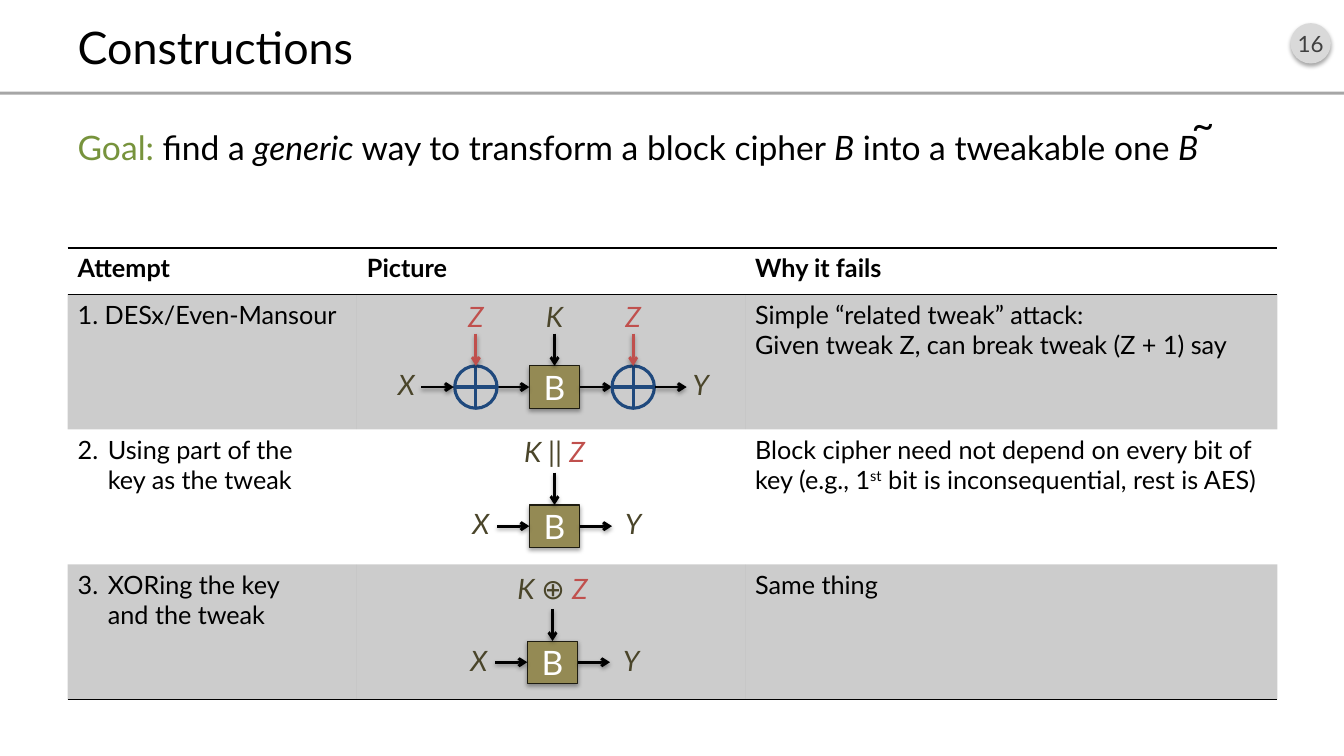
from lxml.etree import SubElement
from pptx import Presentation
from pptx.dml.color import RGBColor
from pptx.enum.shapes import MSO_CONNECTOR, MSO_SHAPE
from pptx.enum.text import MSO_ANCHOR, MSO_AUTO_SIZE, PP_ALIGN
from pptx.oxml.ns import qn
from pptx.util import Inches, Pt

COLORS = {
    "black": "000000", "white": "FFFFFF", "goal": "77933C", "badge": "D9D9D9",
    "badge_text": "404040", "rule": "A6A6A6", "cipher": "948A54",
    "cipher_edge": "1E1C11", "label": "4A452A", "tweak": "C0504D", "xor": "1F497D",
}
NO_GRID_STYLE = "{2D5ABB26-0587-4C30-8999-92F81FD0307C}"
TOP, LEFT, RIGHT = 0, 1, 3


def rgb(name):
    return RGBColor.from_string(COLORS[name])


def write(paragraph, text, size=18, color="black", bold=False, italic=False, baseline=None):
    run = paragraph.add_run()
    run.text = text
    font = run.font
    font.name, font.size, font.bold, font.italic = "Lato", Pt(size), bold, italic
    font.color.rgb = rgb(color)
    if baseline:
        font._element.set("baseline", str(baseline * 1000))


def add_color(parent, name, alpha=None):
    color = SubElement(parent, qn("a:srgbClr"), val=COLORS[name])
    if alpha:
        SubElement(color, qn("a:alpha"), val=str(alpha * 1000))


def add_effects(shape, shadow):
    """Replace the theme shadow with a soft drop shadow, or with none."""
    effects = SubElement(shape._element.spPr, qn("a:effectLst"))
    if shadow:
        outer = SubElement(effects, qn("a:outerShdw"), blurRad=str(Pt(3.1)),
                           dist=str(Pt(1.7)), dir="5400000", rotWithShape="0")
        add_color(outer, "black", 35)


class SlideBuilder:
    """Style and element methods for the current slide."""

    def __init__(self, presentation):
        self.slide = presentation.slides.add_slide(presentation.slide_layouts[1])
        self.shapes = self.slide.shapes

    def start_group(self):
        self.shapes = self.slide.shapes.add_group_shape().shapes

    def placeholder(self, index, left, top, width, height, anchor):
        shape = self.slide.placeholders[index]
        shape.left, shape.top = Inches(left), Inches(top)
        shape.width, shape.height = Inches(width), Inches(height)
        frame = shape.text_frame
        frame.auto_size, frame.vertical_anchor = MSO_AUTO_SIZE.NONE, anchor
        paragraph = frame.paragraphs[0]
        paragraph.alignment = PP_ALIGN.LEFT
        return paragraph

    def shape(self, kind, left, top, width, height, fill=None, line=None,
              line_width=0.75, shadow=False):
        shape = self.shapes.add_shape(kind, Inches(left), Inches(top),
                                      Inches(width), Inches(height))
        if fill:
            shape.fill.solid()
            shape.fill.fore_color.rgb = rgb(fill)
        else:
            shape.fill.background()
        if line:
            shape.line.color.rgb = rgb(line)
            shape.line.width = Pt(line_width)
        else:
            shape.line.fill.background()
        add_effects(shape, shadow)
        return shape

    def caption(self, shape, text, **format):
        frame = shape.text_frame
        frame.margin_left = frame.margin_right = 0
        frame.vertical_anchor = MSO_ANCHOR.MIDDLE
        frame.paragraphs[0].alignment = PP_ALIGN.CENTER
        write(frame.paragraphs[0], text, **format)

    def text_box(self, left, top, width, height, wrap=True):
        frame = self.shapes.add_textbox(Inches(left), Inches(top),
                                        Inches(width), Inches(height)).text_frame
        frame.word_wrap = wrap
        frame.auto_size = MSO_AUTO_SIZE.SHAPE_TO_FIT_TEXT
        return frame

    def label(self, center, top, *parts, width=0.42):
        """Centred italic label; each part is (text, color, italic)."""
        frame = self.text_box(center - width / 2, top, width, 0.34)
        frame.margin_left = frame.margin_right = frame.margin_top = frame.margin_bottom = 0
        frame.paragraphs[0].alignment = PP_ALIGN.CENTER
        for text, color, italic in parts:
            write(frame.paragraphs[0], text, size=20, color=color, italic=italic)

    def line(self, x1, y1, x2, y2, color="black", width=2.0, arrow=True):
        line = self.shapes.add_connector(MSO_CONNECTOR.STRAIGHT, Inches(x1), Inches(y1),
                                         Inches(x2), Inches(y2))
        line.line.color.rgb = rgb(color)
        line.line.width = Pt(width)
        if arrow:
            SubElement(line.line._get_or_add_ln(), qn("a:tailEnd"), type="arrow")
        add_effects(line, arrow)
        return line

    def xor(self, center, top):
        """Circled plus with the tweak entering from above."""
        size, half = 0.42, 0.21
        left = center - half
        self.shape(MSO_SHAPE.OVAL, left, top, size, size, line="xor", line_width=2.25)
        self.line(left, top + half, left + size, top + half, "xor", 2.25, arrow=False)
        self.line(center, top, center, top + size, "xor", 2.25, arrow=False)
        self.label(center, top - 0.66, ("Z", "tweak", True))
        self.line(center, top - 0.32, center, top, "tweak")

    def cipher(self, center, top, key, key_width, key_rise, masked=False):
        """Block cipher B with key, input X and output Y, optionally XOR-masked."""
        self.start_group()
        middle, arrow, edge = top + 0.21, 0.32, 0.25
        box = self.shape(MSO_SHAPE.RECTANGLE, center - edge, top, 2 * edge, 0.42,
                         fill="cipher", line="cipher_edge", shadow=True)
        self.caption(box, "B", size=24, color="white")
        self.label(center, top - key_rise, *key, width=key_width)
        self.line(center, top - arrow, center, top).end_connect(box, TOP)
        start, end = center - edge - arrow, center + edge + arrow
        self.line(start, middle, center - edge, middle).end_connect(box, LEFT)
        self.line(center + edge, middle, end, middle).begin_connect(box, RIGHT)
        input_x, output_x = center - 0.73, center + 0.78
        if masked:
            for side in (-1, 1):
                self.xor(center + side * 0.78, top)
            self.line(center - 1.32, middle, center - 1, middle)
            self.line(center + 1, middle, center + 1.31, middle)
            input_x, output_x = center - 1.47, center + 1.45
        self.label(input_x, top + 0.02, ("X", "label", True))
        self.label(output_x, top + 0.02, ("Y", "label", True))

    def border(self, cell, side):
        line = SubElement(cell._tc.get_or_add_tcPr(), qn("a:" + side), w=str(Pt(1)))
        add_color(SubElement(line, qn("a:solidFill")), "black")

    def table(self, rows, left, top, widths, heights):
        frame = self.slide.shapes.add_table(
            len(rows), len(widths), Inches(left), Inches(top),
            Inches(sum(widths)), Inches(sum(heights)))
        next(frame._element.iter(qn("a:tableStyleId"))).text = NO_GRID_STYLE
        table = frame.table
        for column, width in zip(table.columns, widths):
            column.width = Inches(width)
        for index, (row, height) in enumerate(zip(rows, heights)):
            table.rows[index].height = Inches(height)
            for cell, lines in zip(table.rows[index].cells, row):
                self.fill_cell(cell, lines, header=index == 0)
                if index == 0:
                    self.border(cell, "lnT")
                if index in (0, len(rows) - 1):
                    self.border(cell, "lnB")
                if index % 2:
                    self.shade(cell)
                elif index:
                    cell.fill.background()
                if index == len(rows) - 1:
                    self.shade(cell)

    def shade(self, cell):
        properties = cell._tc.get_or_add_tcPr()
        if properties.find(qn("a:solidFill")) is None:
            add_color(SubElement(properties, qn("a:solidFill")), "black", 20)

    def fill_cell(self, cell, lines, header):
        for number, line in enumerate(lines):
            frame = cell.text_frame
            paragraph = frame.add_paragraph() if number else frame.paragraphs[0]
            for text, baseline in line:
                first, *rest = text.split("\n")
                write(paragraph, first, bold=header, baseline=baseline)
                for part in rest:
                    paragraph.add_line_break()
                    write(paragraph, part, bold=header)
                if "\t" in text:  # hanging number
                    properties = paragraph._p.get_or_add_pPr()
                    properties.set("marL", str(Inches(0.3)))
                    properties.set("indent", str(-Inches(0.3)))


def main():
    presentation = Presentation()
    presentation.slide_width, presentation.slide_height = Inches(13.33), Inches(7.5)
    builder = SlideBuilder(presentation)

    # Header
    badge = builder.shape(MSO_SHAPE.OVAL, 12.8, 0.23, 0.4, 0.4, fill="badge", shadow=True)
    builder.caption(badge, "16", size=16, color="badge_text")
    builder.shape(MSO_SHAPE.RECTANGLE, 0, 0.91, 13.33, 0.03, fill="rule")
    write(builder.placeholder(0, 0.67, 0.16, 12, 0.6, MSO_ANCHOR.MIDDLE),
          "Constructions", size=32)

    # Goal
    goal = builder.placeholder(1, 0.67, 1.21, 12, 5.75, MSO_ANCHOR.TOP)
    goal.space_before = Pt(8)
    properties = goal._p.get_or_add_pPr()
    properties.set("marL", "0")
    properties.set("indent", "0")
    SubElement(properties, qn("a:buNone"))
    write(goal, "Goal:", size=24, color="goal")
    for text, italic in ((" find a ", False), ("generic", True),
                         (" way to transform a block cipher ", False), ("B", True),
                         (" into a tweakable one ", False), ("B", True)):
        write(goal, text, size=24, italic=italic)
    tilde = builder.text_box(11.72, 0.95, 0.43, 0.57, wrap=False)
    write(tilde.paragraphs[0], "~", size=28)

    # Table: cells hold paragraphs, paragraphs hold (text, baseline) runs
    def plain(*lines):
        return [[(line, None)] for line in lines]

    first_bit = [[("Block cipher need not depend on every bit of key (e.g., 1", None),
                  ("st", 30), (" bit is inconsequential, rest is AES)", None)]]
    builder.table([
        [plain("Attempt"), plain("Picture"), plain("Why it fails")],
        [plain("1. DESx/Even-Mansour"), [],
         plain("Simple “related tweak” attack:", "Given tweak Z, can break tweak (Z + 1) say")],
        [plain("2.\tUsing part of the\nkey as the tweak"), [], first_bit],
        [plain("3.\tXORing the key\nand the tweak"), [], plain("Same thing")],
    ], 0.67, 2.46, [2.87, 3.85, 5.28], [0.46] + [1.34] * 3)

    # Cipher diagrams
    tweak = ("Z", "tweak", True)
    key = ("K ", "label", True)
    builder.cipher(5.5, 3.63, [("K", "label", True)], 0.42, 0.66, masked=True)
    builder.cipher(5.5, 5.01, [key, ("|| ", "label", False), tweak], 0.64, 0.7)
    builder.cipher(5.48, 6.36, [key, ("⊕ ", "label", False), tweak], 0.89, 0.69)

    presentation.save("out.pptx")


if __name__ == "__main__":
    main()
